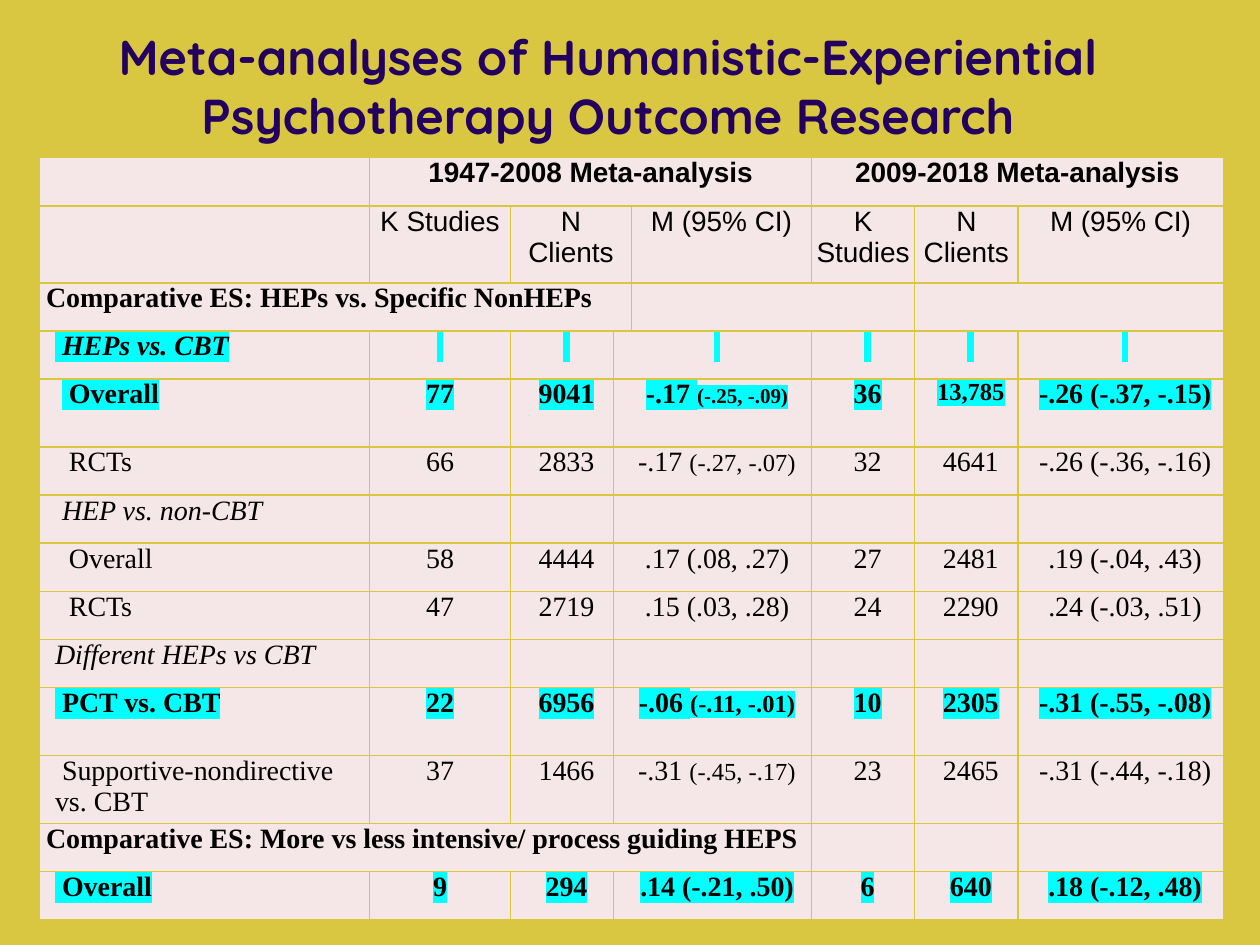
from dataclasses import dataclass

from lxml import etree
from pptx import Presentation
from pptx import util as u
from pptx.dml.color import RGBColor
from pptx.enum import text
from pptx.oxml import ns

COLORS = {
    "background": "D9C641",
    "cell": "F5E7E7",
    "title": "23005F",
    "text": "000000",
    "highlight": "00FFFF",
}
SERIF, SANS, TITLE_FONT = "Times New Roman", "Arial", "Quicksand"
COLUMN_WIDTHS = [6.65, 2.84, 2.08, 0.26, 3.63, 2.08, 2.08, 4.14]
LOW, MIDDLE, HIGH = 0.97, 1.37, 1.55
HEADER_COLUMNS = [1, 2, 4, 5, 6, 7]
VALUE_COLUMNS = [1, 2, 3, 5, 6, 7]
MEASURES = ["K Studies", "N Clients", "M (95% CI)"]
INDENT = 0.18
CENTER = text.PP_ALIGN.CENTER


@dataclass
class Result:
    label: str
    values: tuple[str, ...] = ()
    height: float = LOW
    marked: bool = False
    italic: bool = False
    first_indent: float = 0
    interval_size: int = 16  # earlier meta-analysis, text in brackets
    clients_size: int = 16  # later meta-analysis, N column


@dataclass
class Section:
    label: str
    merges: tuple[tuple[int, int], ...]
    results: tuple[Result, ...]


SECTIONS = [
    Section("Comparative ES: HEPs vs. Specific NonHEPs", ((0, 3), (4, 5), (6, 7)), (
        Result(" HEPs vs. CBT", (" ",) * 6, marked=True, italic=True),
        Result(" Overall", ("77", "9041", "-.17 (-.25, -.09)", "36", "13,785", "-.26 (-.37, -.15)"),
               MIDDLE, marked=True, first_indent=0.14, interval_size=12, clients_size=14),
        Result("RCTs", ("66", "2833", "-.17 (-.27, -.07)", "32", "4641", "-.26 (-.36, -.16)"),
               first_indent=0.28, interval_size=14),
        Result("HEP vs. non-CBT", italic=True, first_indent=0.14),
        Result("Overall", ("58", "4444", ".17 (.08, .27)", "27", "2481", ".19 (-.04, .43)"),
               first_indent=0.28),
        Result("RCTs", ("47", "2719", ".15 (.03, .28)", "24", "2290", ".24 (-.03, .51)"),
               first_indent=0.28),
        Result("Different HEPs vs CBT", italic=True),
        Result(" PCT vs. CBT", ("22", "6956", "-.06 (-.11, -.01)", "10", "2305", "-.31 (-.55, -.08)"),
               MIDDLE, marked=True, interval_size=14),
        Result("Supportive-nondirective vs. CBT",
               ("37", "1466", "-.31 (-.45, -.17)", "23", "2465", "-.31 (-.44, -.18)"),
               MIDDLE, first_indent=0.14, interval_size=14),
    )),
    Section("Comparative ES: More vs less intensive/ process guiding HEPS", ((0, 4),), (
        Result(" Overall", ("9", "294", ".14 (-.21, .50)", "6", "640", ".18 (-.12, .48)"), marked=True),
    )),
]


def color(name: str) -> RGBColor:
    return RGBColor.from_string(COLORS[name])


def write(para, words: str, *, font: str = SERIF, size: int = 16, bold: bool = False,
          italic: bool = False, marked: bool = False, ink: str = "text") -> None:
    span = para.add_run()
    span.text = words
    span.font.size = u.Pt(size)
    span.font.bold = bold
    span.font.italic = italic
    span.font.color.rgb = color(ink)
    if marked:
        highlight = etree.SubElement(span.font._element, ns.qn("a:highlight"))
        etree.SubElement(highlight, ns.qn("a:srgbClr"), val=COLORS["highlight"])
    span.font.name = font


def indent(para, left: float, first: float = 0) -> None:
    properties = para._p.get_or_add_pPr()
    properties.set("marL", str(u.Cm(left)))
    properties.set("indent", str(u.Cm(first)))


def style_cell(cell, margin: float = 0.13) -> None:
    cell.margin_left = cell.margin_right = u.Cm(margin)
    cell.margin_top = cell.margin_bottom = 0
    properties = cell._tc.get_or_add_tcPr()
    for side in ("lnL", "lnR", "lnT", "lnB"):
        line = etree.SubElement(properties, ns.qn(f"a:{side}"), w=str(u.Pt(1)))
        fill = etree.SubElement(line, ns.qn("a:solidFill"))
        etree.SubElement(fill, ns.qn("a:srgbClr"), val=COLORS["background"])
    cell.fill.solid()
    cell.fill.fore_color.rgb = color("cell")


def merge(table, row: int, first: int, last: int) -> None:
    table.cell(row, first).merge(table.cell(row, last))


def draw_header(table) -> None:
    headings = [(1, 4, "1947-2008 Meta-analysis"), (5, 7, "2009-2018 Meta-analysis")]
    for first, last, heading in headings:
        merge(table, 0, first, last)
        para = table.cell(0, first).text_frame.paragraphs[0]
        para.alignment = CENTER
        write(para, heading, font=SANS, bold=True)
    merge(table, 1, 2, 3)
    for column, measure in zip(HEADER_COLUMNS, MEASURES * 2):
        para = table.cell(1, column).text_frame.paragraphs[0]
        para.alignment = CENTER
        write(para, measure, font=SANS)


def draw_section(table, row: int, section: Section) -> None:
    for first, last in section.merges:
        merge(table, row, first, last)
    write(table.cell(row, 0).text_frame.paragraphs[0], section.label, bold=True)


def draw_result(table, row: int, result: Result) -> None:
    look = {"bold": result.marked, "italic": result.italic, "marked": result.marked}
    merge(table, row, 3, 4)
    label = table.cell(row, 0).text_frame.paragraphs[0]
    indent(label, INDENT, result.first_indent)
    write(label, result.label, **look)
    for column, value in zip(VALUE_COLUMNS, result.values):
        para = table.cell(row, column).text_frame.paragraphs[0]
        para.alignment = CENTER
        if column > 1:
            indent(para, INDENT)
        if column == 3 and result.interval_size != 16:
            mean, interval = value.split("(")
            write(para, mean, **look)
            write(para, "(" + interval, size=result.interval_size, **look)
        else:
            write(para, value, size=result.clients_size if column == 6 else 16, **look)


def draw_table(page) -> None:
    body = [item for section in SECTIONS for item in (section, *section.results)]
    heights = [LOW, HIGH] + [getattr(item, "height", LOW) for item in body]
    frame = page.shapes.add_table(len(heights), len(COLUMN_WIDTHS), u.Cm(0.8), u.Cm(3.18),
                                  u.Cm(sum(COLUMN_WIDTHS)), u.Cm(sum(heights)))
    table = frame.table
    table.first_row = table.horz_banding = False
    for column, width in zip(table.columns, COLUMN_WIDTHS):
        column.width = u.Cm(width)
    for index, height in enumerate(heights):
        table.rows[index].height = u.Cm(height)
        for cell in table.rows[index].cells:
            style_cell(cell, 0.1 if index < 2 else 0.13)
    draw_header(table)
    for row, item in enumerate(body, start=2):
        if isinstance(item, Section):
            draw_section(table, row, item)
        else:
            draw_result(table, row, item)


def draw_title(page) -> None:
    box = page.shapes.add_textbox(u.Cm(1.04), u.Cm(1.04), u.Cm(22.43), u.Cm(1.35))
    box.text_frame.word_wrap = True
    box.text_frame.vertical_anchor = text.MSO_ANCHOR.MIDDLE
    para = box.text_frame.paragraphs[0]
    para.alignment = CENTER
    write(para, "Meta-analyses of Humanistic-Experiential Psychotherapy Outcome Research",
          font=TITLE_FONT, size=28, bold=True, ink="title")


def main() -> None:
    deck = Presentation()
    deck.slide_width, deck.slide_height = u.Cm(25.4), u.Cm(19.05)
    page = deck.slides.add_slide(deck.slide_layouts[6])
    page.background.fill.solid()
    page.background.fill.fore_color.rgb = color("background")
    draw_title(page)
    draw_table(page)
    deck.save("out.pptx")


if __name__ == "__main__":
    main()
